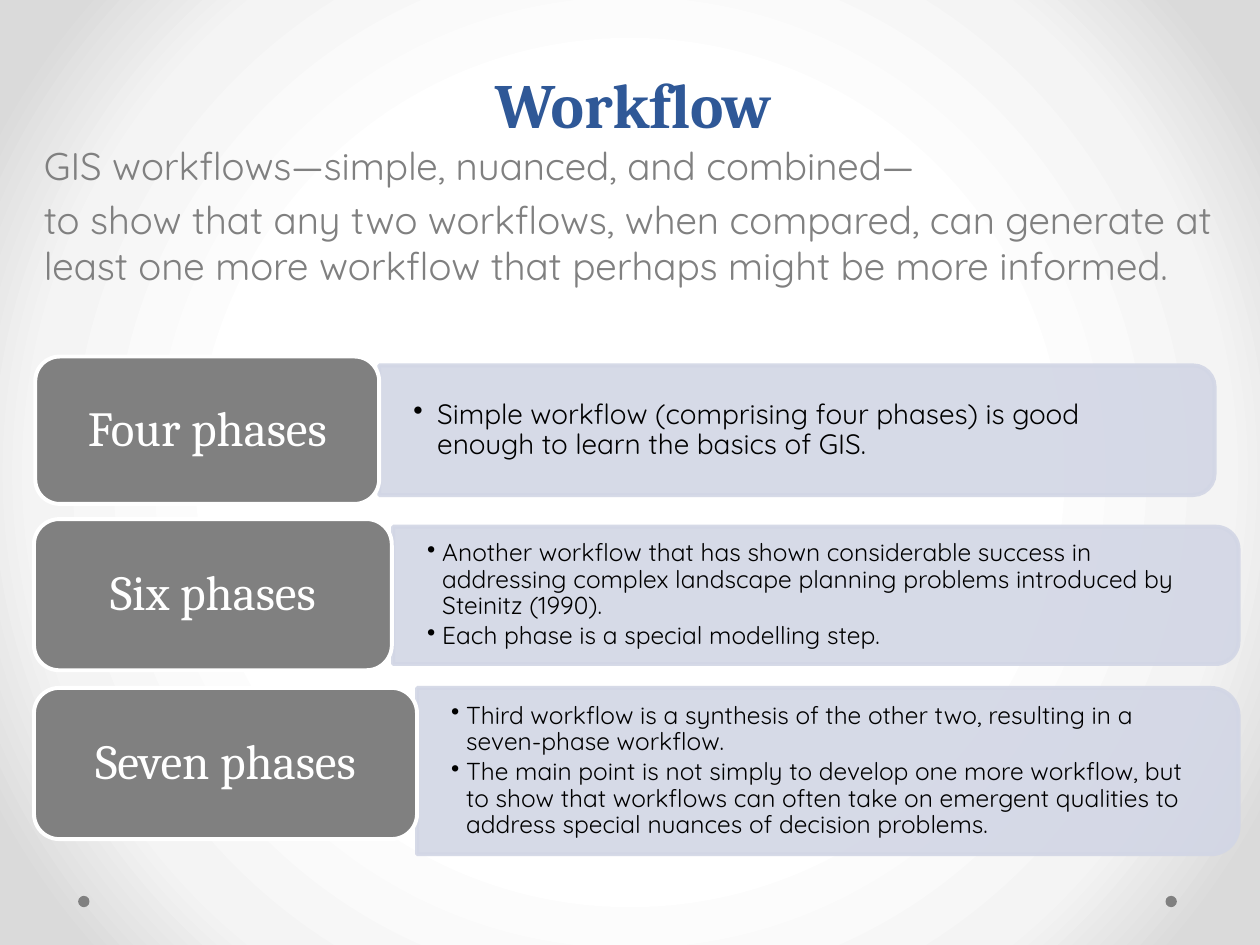
from dataclasses import dataclass

from lxml.etree import SubElement
from pptx import Presentation
from pptx.dml.color import RGBColor
from pptx.enum.shapes import MSO_SHAPE
from pptx.enum.text import MSO_ANCHOR, MSO_AUTO_SIZE, PP_ALIGN
from pptx.oxml.ns import qn
from pptx.util import Inches, Pt

HEADING_FONT, BODY_FONT = "Cambria", "Quicksand"
GRAY, WHITE, BLUE, LAVENDER, BLACK = "808080", "FFFFFF", "2F5897", "D2D6E5", "000000"


@dataclass(frozen=True)
class Box:
    left: float
    top: float
    width: float
    height: float

    def lengths(self):
        return [Inches(value) for value in (self.left, self.top, self.width, self.height)]


@dataclass(frozen=True)
class PhaseRow:
    label: str
    label_box: Box
    panel_box: Box
    bullets: tuple[str, ...]
    size: int
    indent: float


ROWS = (
    PhaseRow("Four phases", Box(0.28, 2.83, 2.73, 1.17), Box(3.01, 2.9, 6.63, 1.03),
             ("Simple workflow (comprising four phases) is good enough to learn "
              "the basics of GIS.",), 16, 0.19),
    PhaseRow("Six phases", Box(0.27, 4.12, 2.84, 1.2), Box(3.12, 4.18, 6.71, 1.09),
             ("Another workflow that has shown considerable success in addressing complex "
              "landscape planning problems introduced by Steinitz (1990).",
              "Each phase is a special modelling step."), 14, 0.12),
    PhaseRow("Seven phases", Box(0.27, 5.46, 3.04, 1.2), Box(3.31, 5.46, 6.52, 1.32),
             ("Third workflow is a synthesis of the other two, resulting in a "
              "seven-phase workflow.",
              "The main point is not simply to develop one more workflow, but to show that "
              "workflows can often take on emergent qualities to address special nuances "
              "of decision problems."), 14, 0.12),
)
INTRO = (
    "GIS workflows—simple, nuanced, and combined—",
    "to show that any two workflows, when compared, can generate at least one more "
    "workflow that perhaps might be more informed.",
)


def color(value: str) -> RGBColor:
    return RGBColor.from_string(value)


def add_run(paragraph, text: str, size: int, font: str, hex_color: str, bold=False):
    run = paragraph.add_run()
    run.text = text
    run.font.size = Pt(size)
    run.font.name = font
    run.font.bold = bold
    run.font.color.rgb = color(hex_color)


def set_margins(frame, horizontal: float, vertical: float):
    frame.margin_left = frame.margin_right = Inches(horizontal)
    frame.margin_top = frame.margin_bottom = Inches(vertical)


def add_paragraphs(frame, texts: tuple[str, ...]):
    """Yield a paragraph of the frame with each text."""
    for index, text in enumerate(texts):
        yield (frame.add_paragraph() if index else frame.paragraphs[0]), text


def add_filled_shape(slide, kind, box: Box, fill: str, line: str | None = None):
    shape = slide.shapes.add_shape(kind, *box.lengths())
    shape.shadow.inherit = False
    shape.fill.solid()
    shape.fill.fore_color.rgb = color(fill)
    if line:
        shape.line.color.rgb = color(line)
        shape.line.width = Pt(2.25)
    else:
        shape.line.fill.background()
    return shape


def add_text_frame(slide, box: Box):
    frame = slide.shapes.add_textbox(*box.lengths()).text_frame
    frame.word_wrap = True
    return frame


def set_background(slide):
    """Fill the background with a gradient that darkens outward from the centre."""
    fill = slide.background.fill
    fill.gradient()
    gradient = fill._fill._gradFill
    for child in list(gradient):
        gradient.remove(child)
    stops = SubElement(gradient, qn("a:gsLst"))
    for percent, value in ((50, "FFFFFF"), (76, "F4F4F4"), (92, "DADADA")):
        stop = SubElement(stops, qn("a:gs"), pos=str(percent * 1000))
        SubElement(stop, qn("a:srgbClr"), val=value)
    path_element = SubElement(gradient, qn("a:path"))
    path_element.set("path", "circle")
    SubElement(path_element, qn("a:fillToRect"), l="50000", t="50000", r="50000", b="50000")


def add_title(slide):
    title = slide.shapes.title
    title.left, title.top, title.width, title.height = Box(0.58, 0.25, 9, 0.92).lengths()
    frame = title.text_frame
    frame.auto_size = MSO_AUTO_SIZE.NONE
    frame.vertical_anchor = MSO_ANCHOR.BOTTOM
    paragraph = frame.paragraphs[0]
    paragraph.alignment = PP_ALIGN.CENTER
    paragraph.line_spacing = Pt(58)
    add_run(paragraph, "Workflow ", 36, HEADING_FONT, BLUE, bold=True)


def add_panel(slide, box: Box):
    """Draw a translucent panel rounded on its right side by a quarter turn."""
    turned = Box(box.left + (box.width - box.height) / 2,
                 box.top + (box.height - box.width) / 2, box.height, box.width)
    panel = add_filled_shape(slide, MSO_SHAPE.ROUND_2_SAME_RECTANGLE, turned, LAVENDER, LAVENDER)
    panel.rotation = 90
    for rgb in panel._element.spPr.iter(qn("a:srgbClr")):
        SubElement(rgb, qn("a:alpha"), val="90000")


def add_bullets(slide, row: PhaseRow):
    panel = row.panel_box
    frame = add_text_frame(slide, Box(panel.left, panel.top + 0.05,
                                      panel.width - 0.05, panel.height - 0.1))
    frame.vertical_anchor = MSO_ANCHOR.MIDDLE
    set_margins(frame, 0.27, 0.14)
    for paragraph, text in add_paragraphs(frame, row.bullets):
        paragraph.level = 1
        paragraph.line_spacing = 0.9
        paragraph.space_after = Pt(0.15 * row.size)
        add_run(paragraph, text, row.size, BODY_FONT, BLACK)
        properties = paragraph._p.get_or_add_pPr()
        properties.set("marL", str(Inches(row.indent)))
        properties.set("indent", str(-Inches(row.indent)))
        SubElement(properties, qn("a:buChar"), char="•")


def add_label(slide, row: PhaseRow):
    label = add_filled_shape(slide, MSO_SHAPE.ROUNDED_RECTANGLE, row.label_box, GRAY, WHITE)
    frame = label.text_frame
    frame.word_wrap = True
    frame.vertical_anchor = MSO_ANCHOR.MIDDLE
    set_margins(frame, 0.12, 0.06)
    paragraph = frame.paragraphs[0]
    paragraph.alignment = PP_ALIGN.CENTER
    paragraph.line_spacing = 0.9
    add_run(paragraph, row.label, 28, HEADING_FONT, WHITE)


def add_intro(slide):
    frame = add_text_frame(slide, Box(0.25, 1.08, 9.67, 1.67))
    for paragraph, text in add_paragraphs(frame, INTRO):
        paragraph.space_before = Pt(4.4)
        add_run(paragraph, text, 22, BODY_FONT, GRAY)


def main():
    presentation = Presentation()
    presentation.slide_width, presentation.slide_height = Inches(10), Inches(7.5)
    slide = presentation.slides.add_slide(presentation.slide_layouts[5])
    set_background(slide)
    for left in (9.25, 0.62):
        add_filled_shape(slide, MSO_SHAPE.OVAL, Box(left, 7.11, 0.09, 0.09), GRAY)
    add_title(slide)
    for row in ROWS:
        add_panel(slide, row.panel_box)
        add_bullets(slide, row)
        add_label(slide, row)
    add_intro(slide)
    presentation.save("out.pptx")


if __name__ == "__main__":
    main()
